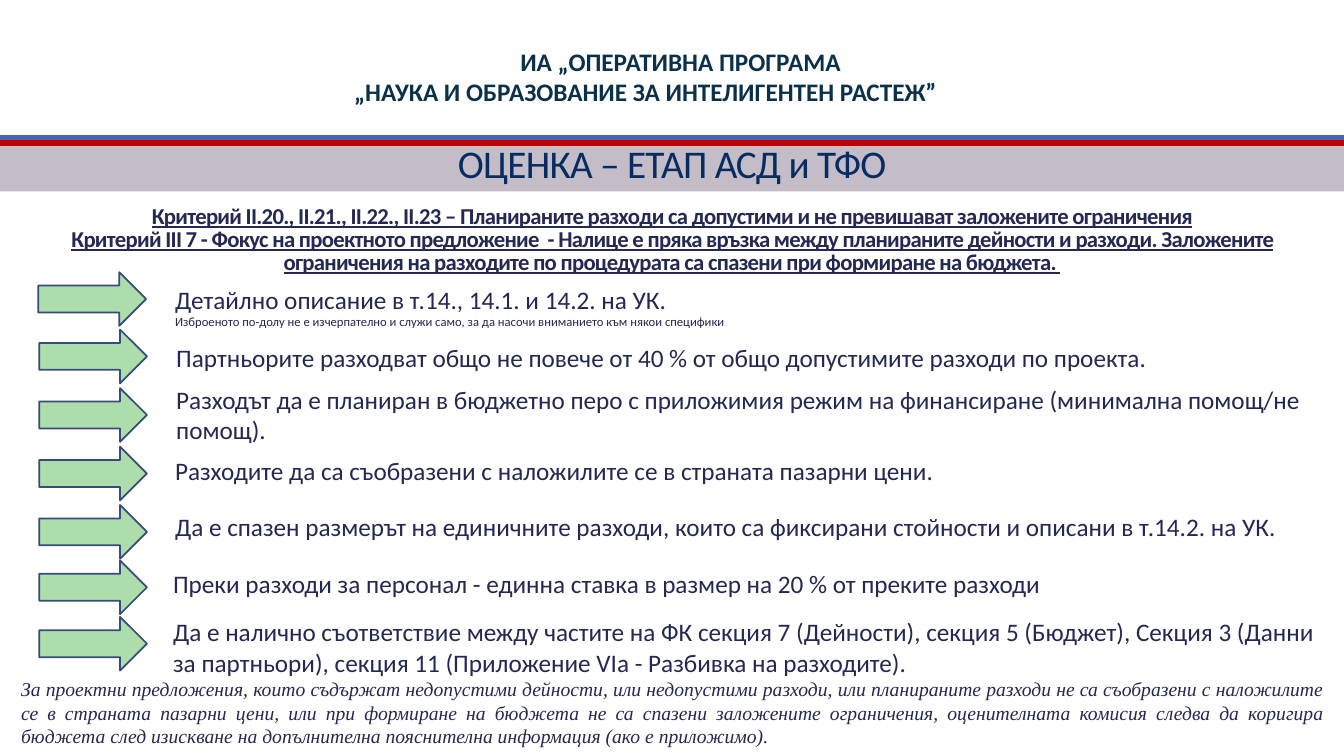
from pptx import Presentation
from pptx.dml.color import RGBColor
from pptx.enum.shapes import MSO_CONNECTOR, MSO_SHAPE
from pptx.enum.text import MSO_ANCHOR, MSO_AUTO_SIZE, PP_ALIGN
from pptx.oxml.ns import qn
from pptx.util import Pt

COLORS = {
    "blue_rule": "4A66AC", "red_rule": "C00000", "header": "0A304A",
    "band": "C4BCC6", "band_text": "072C62", "text": "242852",
    "arrow": "ADDDAB", "arrow_line": "374B7F",
}
WIDTH, HEIGHT = 960, 540
ARROW_WIDTH, ARROW_HEIGHT = 77, 38.4

PROGRAMME = ["ИА „ОПЕРАТИВНА ПРОГРАМА", "„НАУКА И ОБРАЗОВАНИЕ ЗА ИНТЕЛИГЕНТЕН РАСТЕЖ”"]
STAGE = "ОЦЕНКА – ЕТАП АСД и ТФО"
CRITERIA = (
    "Критерий II.20., II.21., II.22., II.23 – Планираните разходи са допустими "
    "и не превишават заложените ограничения\v"
    "Критерий III 7 - Фокус на проектното предложение  - Налице е пряка връзка между "
    "планираните дейности и разходи. Заложените ограничения на разходите по процедурата "
    "са спазени при формиране на бюджета. "
)
# arrow left and top, text left, top and width, then paragraphs
REQUIREMENTS = [
    (27.4, 194.4, 118, 199.4, 828, [
        "Детайлно описание в т.14., 14.1. и 14.2. на УК.",
        "Изброеното по-долу не е изчерпателно и служи само, за да насочи вниманието "
        "към някои специфики"]),
    (28, 235.4, 118.8, 241.2, 828, [
        "Партньорите разходват общо не повече от 40 % от общо допустимите разходи по проекта."]),
    (28, 277.2, 118.8, 270.7, 841, [
        "Разходът да е планиран в бюджетно перо с приложимия режим на финансиране "
        "(минимална помощ/не помощ)."]),
    (28, 319, 118, 321.8, 836, [
        "Разходите да са съобразени с наложилите се в страната пазарни цени."]),
    (28, 360.7, 118, 361.4, 822, [
        "Да е спазен размерът на единичните разходи, които са фиксирани стойности "
        "и описани в т.14.2. на УК."]),
    (28, 400.3, 116.6, 402.5, 837, [
        "Преки разходи за персонал - единна ставка в размер на 20 % от преките разходи"]),
    (28, 440.6, 116.6, 437, 837, [
        "Да е налично съответствие между частите на ФК секция 7 (Дейности), "
        "секция 5 (Бюджет), Секция 3 (Данни за партньори), секция 11 "
        "(Приложение VIa - Разбивка на разходите)."]),
]
CONSEQUENCE = (
    "За проектни предложения, които съдържат недопустими дейности, или недопустими разходи, "
    "или планираните разходи не са съобразени с наложилите се в страната пазарни цени, или "
    "при формиране на бюджета не са спазени заложените ограничения, оценителната комисия "
    "следва да коригира бюджета след изискване на допълнителна пояснителна информация "
    "(ако е приложимо)."
)


def color(name):
    return RGBColor.from_string(COLORS[name])


def style(paragraph, size, color_name="text", face="Calibri", align=PP_ALIGN.LEFT):
    paragraph.alignment = align
    font = paragraph.font
    font.size, font.name = Pt(size), face
    font.color.rgb = color(color_name)
    return font


def tighten(paragraph):
    """Set the condensed letter and line spacing of the headings."""
    paragraph.line_spacing = 0.85
    for run in paragraph.runs:
        run.font._element.set("spc", "-50")


def add_text(slide, box, lines):
    frame = slide.shapes.add_textbox(*map(Pt, box)).text_frame
    frame.word_wrap = True
    frame.text = "\n".join(lines)
    return frame


def add_rule(slide, top, color_name):
    rule = slide.shapes.add_connector(MSO_CONNECTOR.STRAIGHT, 0, Pt(top), Pt(WIDTH), Pt(top))
    rule.line.width = Pt(3.75)
    rule.line.color.rgb = color(color_name)
    properties = rule._element.spPr
    properties.append(properties.makeelement(qn("a:effectLst"), {}))


def add_header(slide, box):
    left, top, width, height = box
    frame = add_text(slide, box, PROGRAMME)
    frame.margin_left = frame.margin_right = 0
    for paragraph in frame.paragraphs:
        style(paragraph, 18, "header", align=PP_ALIGN.CENTER).bold = True
    # The second line is centred 25 points further left
    frame.paragraphs[1]._p.get_or_add_pPr().set("marR", str(Pt(50)))
    add_rule(slide, top + height + 18, "blue_rule")
    add_rule(slide, top + height + 21.7, "red_rule")


def add_stage_band(slide, box):
    band = slide.shapes.add_shape(MSO_SHAPE.RECTANGLE, *map(Pt, box))
    band.shadow.inherit = False
    band.fill.solid()
    band.fill.fore_color.rgb = color("band")
    band.line.fill.background()
    frame = band.text_frame
    frame.word_wrap = True
    frame.vertical_anchor = MSO_ANCHOR.BOTTOM
    frame.text = STAGE
    style(frame.paragraphs[0], 28, "band_text", align=PP_ALIGN.CENTER)
    tighten(frame.paragraphs[0])


def place_criteria_title(slide, box):
    title = slide.shapes.title
    title.left, title.top, title.width, title.height = map(Pt, box)
    frame = title.text_frame
    frame.text = CRITERIA
    frame.word_wrap = True
    frame.auto_size = MSO_AUTO_SIZE.NONE
    frame.vertical_anchor = MSO_ANCHOR.BOTTOM
    font = style(frame.paragraphs[0], 16.2, align=PP_ALIGN.CENTER)
    font.bold = font.underline = True
    tighten(frame.paragraphs[0])


def add_arrow(slide, left, top):
    arrow = slide.shapes.add_shape(
        MSO_SHAPE.RIGHT_ARROW, Pt(left), Pt(top), Pt(ARROW_WIDTH), Pt(ARROW_HEIGHT))
    arrow.shadow.inherit = False
    arrow.fill.solid()
    arrow.fill.fore_color.rgb = color("arrow")
    arrow.line.color.rgb = color("arrow_line")
    arrow.line.width = Pt(1.25)


def add_requirement(slide, arrow_left, arrow_top, left, top, width, lines):
    add_arrow(slide, arrow_left, arrow_top)
    frame = add_text(slide, (left, top, width, 29), lines)
    for paragraph, size in zip(frame.paragraphs, (18, 9)):
        style(paragraph, size)


def add_consequence(slide, box):
    frame = add_text(slide, box, [CONSEQUENCE])
    style(frame.paragraphs[0], 14, face="Times New Roman", align=PP_ALIGN.JUSTIFY).italic = True


def main():
    deck = Presentation()
    deck.slide_width, deck.slide_height = Pt(WIDTH), Pt(HEIGHT)
    slide = deck.slides.add_slide(deck.slide_layouts[5])
    add_header(slide, (246.2, 29.5, 480, 51))
    add_stage_band(slide, (0, 104.4, WIDTH, 32.4))
    place_criteria_title(slide, (0, 140.4, WIDTH, 59.8))
    for requirement in REQUIREMENTS:
        add_requirement(slide, *requirement)
    add_consequence(slide, (8, 480.2, 945.4, 58.3))
    deck.save("out.pptx")


if __name__ == "__main__":
    main()
